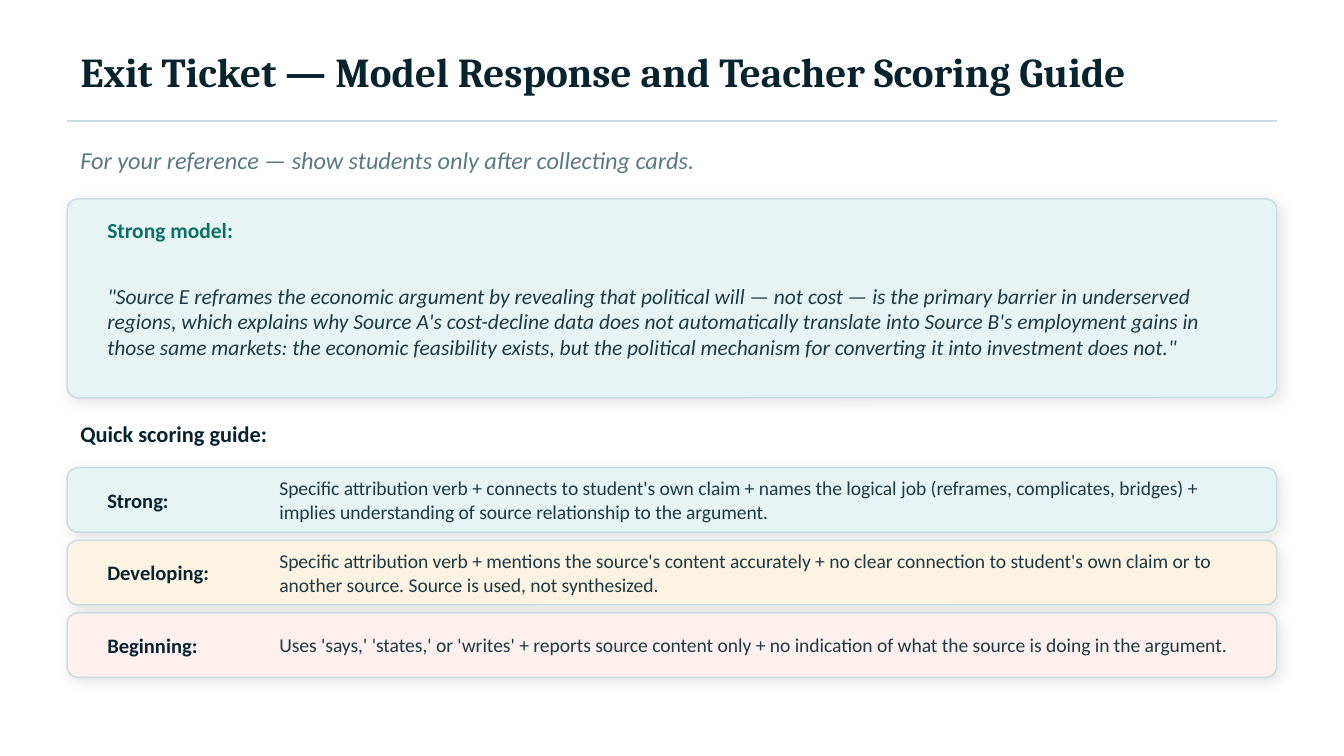
from lxml import etree
from pptx import Presentation
from pptx.dml.color import RGBColor
from pptx.enum.shapes import MSO_CONNECTOR as CONN, MSO_SHAPE as SHAPE
from pptx.enum.text import MSO_ANCHOR as ANCHOR, MSO_AUTO_SIZE as AUTO, PP_ALIGN as ALIGN
from pptx.oxml.ns import qn
from pptx.util import Pt

# Content
TITLE = "Exit Ticket — Model Response and Teacher Scoring Guide"
NOTE = "For your reference — show students only after collecting cards."
MODEL_LABEL = "Strong model:"
MODEL = (
    "\"Source E reframes the economic argument by revealing that political will — not cost — "
    "is the primary barrier in underserved regions, which explains why Source A's cost-decline "
    "data does not automatically translate into Source B's employment gains in those same "
    "markets: the economic feasibility exists, but the political mechanism for converting it "
    "into investment does not.\""
)
GUIDE_LABEL = "Quick scoring guide:"
LEVELS = [
    ("Strong:", "E6F5F3",
     "Specific attribution verb + connects to student's own claim + names the logical job "
     "(reframes, complicates, bridges) + implies understanding of source relationship to the "
     "argument."),
    ("Developing:", "FDF3E3",
     "Specific attribution verb + mentions the source's content accurately + no clear connection "
     "to student's own claim or to another source. Source is used, not synthesized."),
    ("Beginning:", "FDF0EF",
     "Uses 'says,' 'states,' or 'writes' + reports source content only + no indication of what "
     "the source is doing in the argument."),
]

# Colours and layout, in points
INK, BODY, MUTED, TEAL, RULE, MINT = "07232E", "1E3A42", "5A7A82", "0D6F66", "C8DDE2", "E6F5F3"
LEFT, WIDTH = 36, 648
PAD = 14.4
INNER_LEFT, INNER_WIDTH = LEFT + PAD, WIDTH - 2 * PAD
RADIUS = 5.76
ROW_TOP, ROW_H, ROW_STEP, ROW_PAD = 250.56, 34.56, 38.88, 4.32
LABEL_W, DETAIL_LEFT = 86.4, 142.56


def rgb(color):
    return RGBColor.from_string(color)


def fill_text(sp, text, size, color, font="Calibri", bold=False, italic=False):
    tf = sp.text_frame
    tf.word_wrap = True
    tf.auto_size = AUTO.NONE
    tf.vertical_anchor = ANCHOR.MIDDLE
    p = tf.paragraphs[0]
    p.alignment = ALIGN.LEFT
    r = p.add_run()
    r.text = text
    r.font.name, r.font.size = font, Pt(size)
    r.font.bold, r.font.italic = bold, italic
    r.font.color.rgb = rgb(color)


def add_text(x, y, w, h, *args, **style):
    fill_text(s.shapes.add_textbox(Pt(x), Pt(y), Pt(w), Pt(h)), *args, **style)


def add_card(y, h, color):
    sp = s.shapes.add_shape(SHAPE.ROUNDED_RECTANGLE, Pt(LEFT), Pt(y), Pt(WIDTH), Pt(h))
    sp.adjustments[0] = RADIUS / h
    sp.fill.solid()
    sp.fill.fore_color.rgb = rgb(color)
    sp.line.color.rgb = rgb(RULE)
    sp.line.width = Pt(0.8)
    # Soft shadow: 9 % black, falling to the lower right
    sp.shadow.inherit = False
    effects = sp.element.spPr.find(qn("a:effectLst"))
    shadow = etree.SubElement(effects, qn("a:outerShdw"), blurRad=str(Pt(7)), dist=str(Pt(2)),
                              dir=str(45 * 60000), algn="bl", rotWithShape="0")
    black = etree.SubElement(shadow, qn("a:srgbClr"), val="000000")
    etree.SubElement(black, qn("a:alpha"), val="9000")


prs = Presentation()
prs.slide_width, prs.slide_height = Pt(720), Pt(405)
s = prs.slides.add_slide(prs.slide_layouts[5])
s.background.fill.solid()
s.background.fill.fore_color.rgb = rgb("FFFFFF")

# Title, rule and note
title = s.shapes.title
title.left, title.top, title.width, title.height = Pt(LEFT), Pt(15.84), Pt(WIDTH), Pt(44.64)
fill_text(title, TITLE, 22, INK, font="Cambria", bold=True)
rule = s.shapes.add_connector(CONN.STRAIGHT, Pt(LEFT), Pt(64.8), Pt(LEFT + WIDTH), Pt(64.8))
rule.line.color.rgb = rgb(RULE)
rule.line.width = Pt(1.2)
etree.SubElement(rule.element.spPr, qn("a:effectLst"))
add_text(LEFT, 72, WIDTH, 27.36, NOTE, 13, MUTED, italic=True)

# Model response
add_card(106.56, 106.56, MINT)
add_text(INNER_LEFT, 112.32, INNER_WIDTH, 21.6, MODEL_LABEL, 11.5, TEAL, bold=True)
add_text(INNER_LEFT, 136.8, INNER_WIDTH, 70.56, MODEL, 11.5, BODY, italic=True)

# Scoring guide
add_text(LEFT, 220.32, WIDTH, 24.48, GUIDE_LABEL, 12, INK, bold=True)
for i, (level, color, detail) in enumerate(LEVELS):
    y = ROW_TOP + i * ROW_STEP
    text_y, text_h = y + ROW_PAD, ROW_H - 2 * ROW_PAD
    add_card(y, ROW_H, color)
    add_text(INNER_LEFT, text_y, LABEL_W, text_h, level, 11, INK, bold=True)
    add_text(DETAIL_LEFT, text_y, INNER_LEFT + INNER_WIDTH - DETAIL_LEFT, text_h,
             detail, 10.5, BODY)

prs.save("out.pptx")
